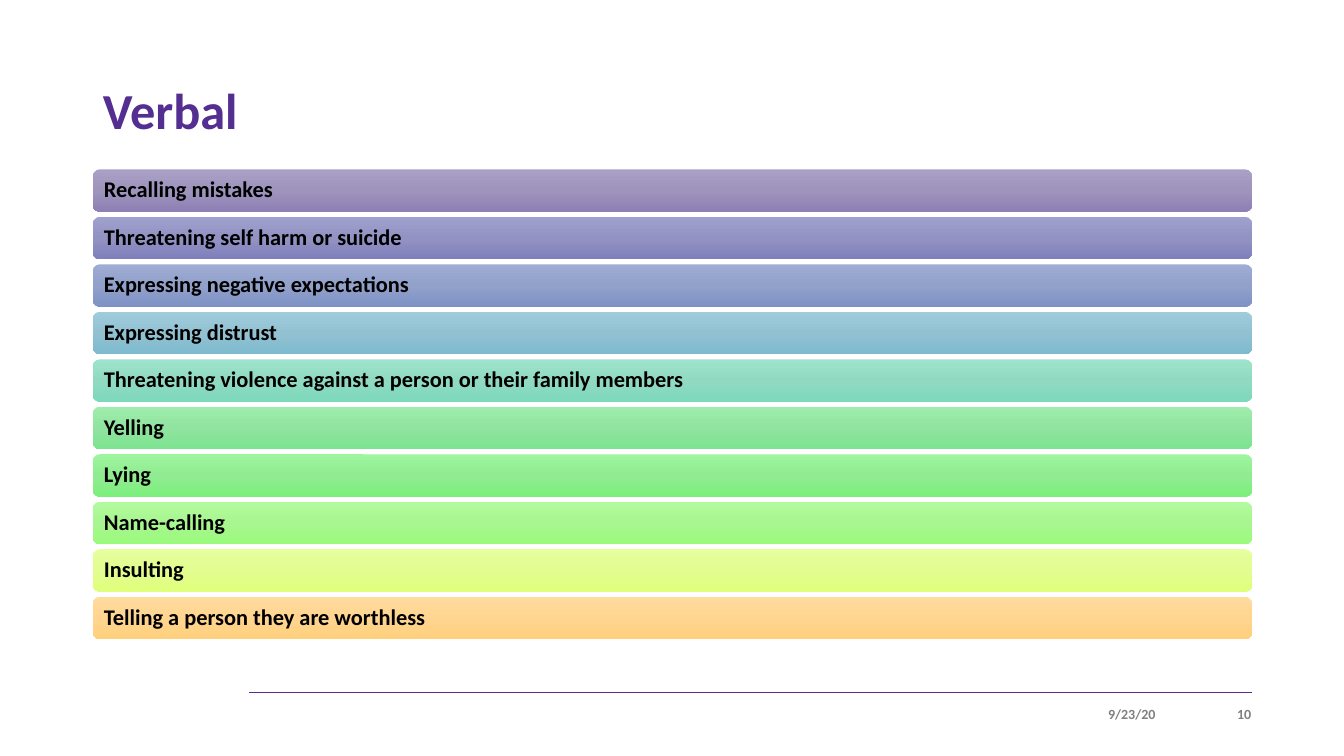
"""Build the "Verbal" slide: ten gradient bars under a title."""
from copy import deepcopy

from pptx import Presentation
from pptx.dml.color import RGBColor
from pptx.enum.shapes import MSO_CONNECTOR as Connector, MSO_SHAPE as Shape
from pptx.enum.text import MSO_ANCHOR as Anchor, MSO_AUTO_SIZE as AutoSize, PP_ALIGN as Align
from pptx.oxml.ns import qn
from pptx.oxml.xmlchemy import OxmlElement
from pptx.util import Inches, Pt

TITLE = "Verbal"
BARS = [
    ("Recalling mistakes", ("AAA0C7", "9E94BC", "8E80B5")),
    ("Threatening self harm or suicide", ("A0A0CE", "9393C3", "7F7FBD")),
    ("Expressing negative expectations", ("9FADD5", "92A1CA", "7E92C6")),
    ("Expressing distrust", ("9FCCDC", "92C1D2", "7DBBCF")),
    ("Threatening violence against a person or their family members",
     ("9EE4CC", "91DAC1", "7DD9BB")),
    ("Yelling", ("9EEDAC", "91E3A0", "7CE490")),
    ("Lying", ("9EF59E", "91EC91", "7CEF7C")),
    ("Name-calling", ("B3FA9E", "A8F690", "9AFB7C")),
    ("Insulting", ("E7FF9E", "E2FD90", "E0FF7C")),
    ("Telling a person they are worthless", ("FFDB9E", "FFD590", "FFD07C")),
]
FOOTERS = [("9/23/20", 8.46, 3), ("10", 11.62, 0.79)]
COLORS = {"purple": "542E91", "gray": "808080", "black": "000000"}
FONT = "Calibri"

LEFT, WIDTH = 0.92, 11.5
BARS_TOP, BARS_BOTTOM, BAR_HEIGHT = 1.68, 6.34, 0.42
PITCH = (BARS_BOTTOM - BARS_TOP - BAR_HEIGHT) / (len(BARS) - 1)
RULE_START, RULE_Y = 2.47, 6.87
FOOTER_TOP, FOOTER_HEIGHT = 6.95, 0.28


def write(shape, text, size, color, align, side, edge):
    """Put one bold, vertically centred line of text in a shape."""
    frame = shape.text_frame
    frame.word_wrap = True
    frame.auto_size = AutoSize.NONE
    frame.vertical_anchor = Anchor.MIDDLE
    frame.margin_left = frame.margin_right = Inches(side)
    frame.margin_top = frame.margin_bottom = Inches(edge)
    para = frame.paragraphs[0]
    para.alignment = align
    para.line_spacing = 0.9
    span = para.add_run()
    span.text = text
    span.font.name = FONT
    span.font.size = Pt(size)
    span.font.bold = True
    span.font.color.rgb = RGBColor.from_string(COLORS[color])


def shade(shape, colors):
    """Fill a shape with evenly spaced colours from top to bottom."""
    shape.fill.gradient()
    shape.fill.gradient_angle = 270
    stops = shape.fill._xPr.find(qn("a:gradFill")).find(qn("a:gsLst"))
    stops.insert(1, deepcopy(stops[0]))
    for index, (stop, color) in enumerate(zip(shape.fill.gradient_stops, colors)):
        stop.position = index / (len(colors) - 1)
        stop.color.rgb = RGBColor.from_string(color)


def main():
    """Lay out the slide and save it."""
    deck = Presentation()
    deck.slide_width, deck.slide_height = Inches(13.33), Inches(7.5)
    page = deck.slides.add_slide(deck.slide_layouts[5])
    shapes = page.shapes

    title = shapes.title
    title.left, title.top = Inches(LEFT), Inches(0.4)
    title.width, title.height = Inches(WIDTH), Inches(1.45)
    write(title, TITLE, 36, "purple", Align.LEFT, 0.1, 0.05)

    rule = shapes.add_connector(Connector.STRAIGHT, Inches(RULE_START), Inches(RULE_Y),
                                Inches(LEFT + WIDTH), Inches(RULE_Y))
    rule.line.color.rgb = RGBColor.from_string(COLORS["purple"])
    rule.line.width = Pt(0.5)
    rule._element.spPr.append(OxmlElement("a:effectLst"))

    for text, left, width in FOOTERS:
        box = shapes.add_textbox(Inches(left), Inches(FOOTER_TOP),
                                 Inches(width), Inches(FOOTER_HEIGHT))
        write(box, text, 10, "gray", Align.RIGHT, 0, 0.05)

    for row, (text, colors) in enumerate(BARS):
        bar = shapes.add_shape(Shape.ROUNDED_RECTANGLE, Inches(LEFT),
                               Inches(BARS_TOP + row * PITCH),
                               Inches(WIDTH), Inches(BAR_HEIGHT))
        bar.shadow.inherit = False
        bar.line.fill.background()
        shade(bar, colors)
        write(bar, text, 16, "black", Align.LEFT, 0.09, 0.07)

    deck.save("out.pptx")


if __name__ == "__main__":
    main()
